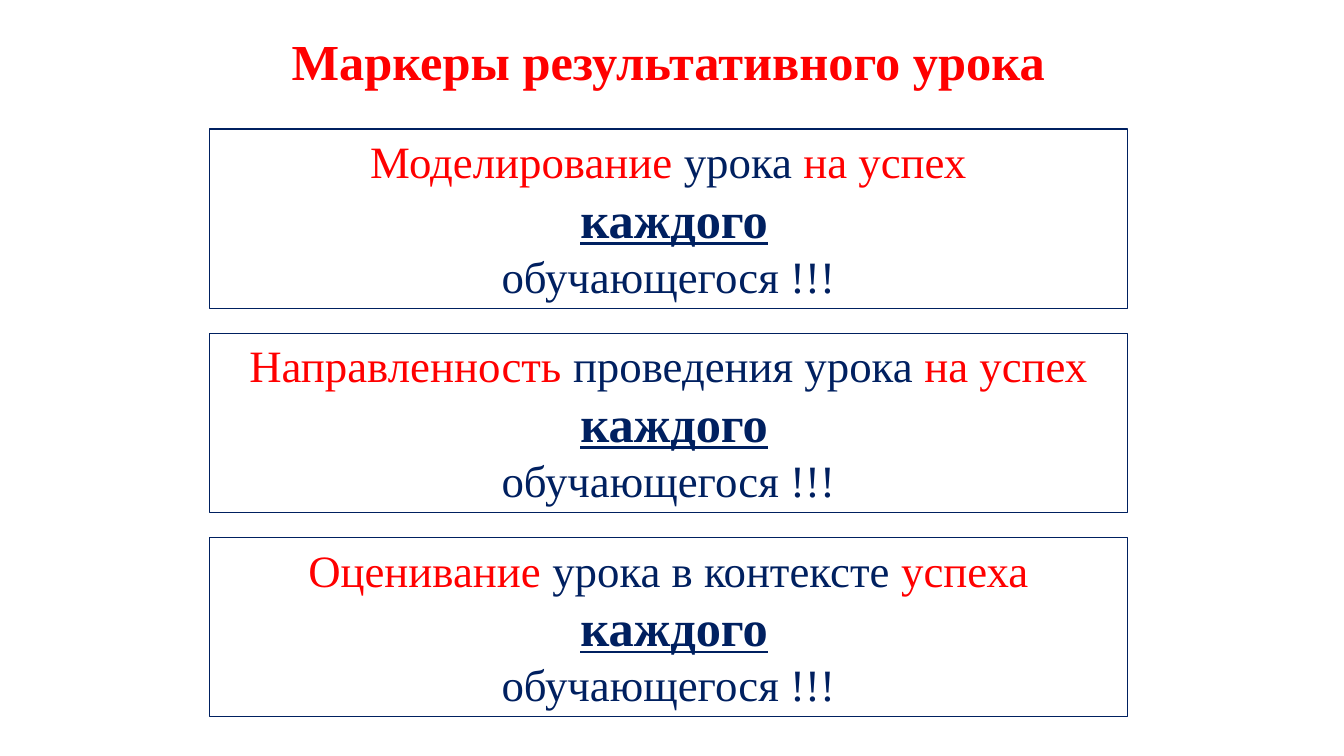
from dataclasses import dataclass

from pptx import Presentation
from pptx.dml.color import RGBColor
from pptx.enum.shapes import MSO_SHAPE
from pptx.enum.text import MSO_ANCHOR, MSO_AUTO_SIZE, PP_ALIGN
from pptx.util import Inches, Pt

RECTANGLE = MSO_SHAPE.RECTANGLE
TOP = MSO_ANCHOR.TOP
FIT_SHAPE = MSO_AUTO_SIZE.SHAPE_TO_FIT_TEXT
CENTER = PP_ALIGN.CENTER

COLORS = {"red": "FF0000", "navy": "002060"}
FONT = "Times New Roman"
TITLE_ONLY = 5

# Column of boxes, in inches
LEFT, WIDTH = 2.08, 9.1
TITLE_TOP, TITLE_HEIGHT = 0.25, 0.71
FIRST_TOP, ROW_PITCH, BOX_HEIGHT = 1.28, 2.025, 1.78


@dataclass(frozen=True)
class Span:
    text: str
    color: str = "navy"
    size: int = 32
    strong: bool = False


@dataclass(frozen=True)
class Marker:
    action: str
    subject: str
    goal: str


MARKERS = [
    Marker("Моделирование", " урока ", "на успех"),
    Marker("Направленность", " проведения урока ", "на успех"),
    Marker("Оценивание", " урока в контексте ", "успеха"),
]
SHARED_LINES = [
    [Span(" "), Span("каждого", size=36, strong=True)],
    [Span("обучающегося !!!")],
]


def rgb(name: str) -> RGBColor:
    return RGBColor.from_string(COLORS[name])


def write_lines(tf, lines: list[list[Span]]) -> None:
    tf.word_wrap = True
    tf.auto_size = FIT_SHAPE
    tf.vertical_anchor = TOP
    for i, spans in enumerate(lines):
        p = tf.paragraphs[0] if i == 0 else tf.add_paragraph()
        p.alignment = CENTER
        for span in spans:
            r = p.add_run()
            r.text = span.text
            r.font.name = FONT
            r.font.size = Pt(span.size)
            r.font.bold = r.font.underline = span.strong
            r.font.color.rgb = rgb(span.color)


def place(sp, top: float, height: float) -> None:
    sp.left, sp.top = Inches(LEFT), Inches(top)
    sp.width, sp.height = Inches(WIDTH), Inches(height)


def add_marker(s, marker: Marker, row: int) -> None:
    sp = s.shapes.add_shape(RECTANGLE, 0, 0, 0, 0)
    place(sp, FIRST_TOP + row * ROW_PITCH, BOX_HEIGHT)
    sp.shadow.inherit = False
    sp.fill.background()
    sp.line.color.rgb = rgb("navy")
    sp.line.width = Pt(0.75)
    first_line = [
        Span(marker.action, "red"),
        Span(marker.subject),
        Span(marker.goal, "red"),
    ]
    write_lines(sp.text_frame, [first_line, *SHARED_LINES])


def main() -> None:
    prs = Presentation()
    prs.slide_width, prs.slide_height = Inches(13.33), Inches(7.5)
    s = prs.slides.add_slide(prs.slide_layouts[TITLE_ONLY])

    # Title
    title = s.shapes.title
    place(title, TITLE_TOP, TITLE_HEIGHT)
    write_lines(title.text_frame, [[Span("Маркеры результативного урока", "red", 36)]])
    title.text_frame.paragraphs[0].runs[0].font.bold = True

    # Three framed markers
    for row, marker in enumerate(MARKERS):
        add_marker(s, marker, row)

    prs.save("out.pptx")


if __name__ == "__main__":
    main()
